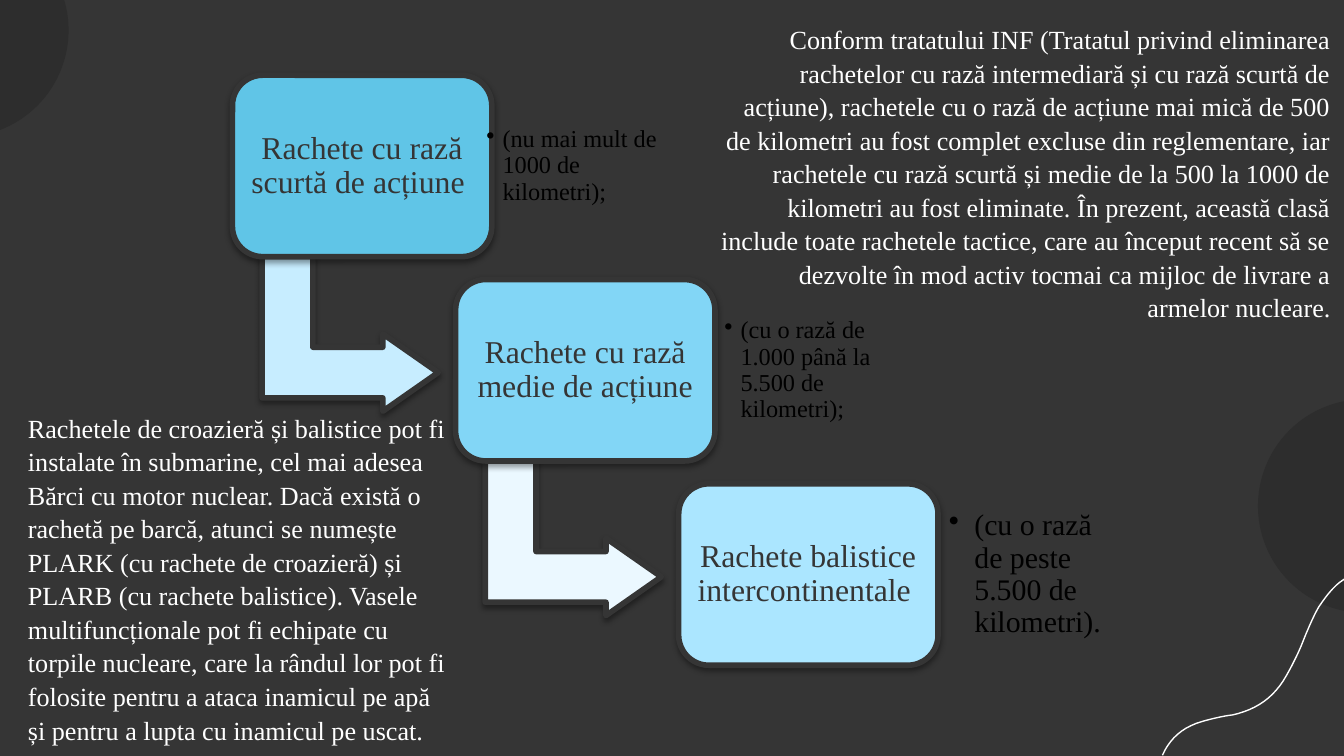
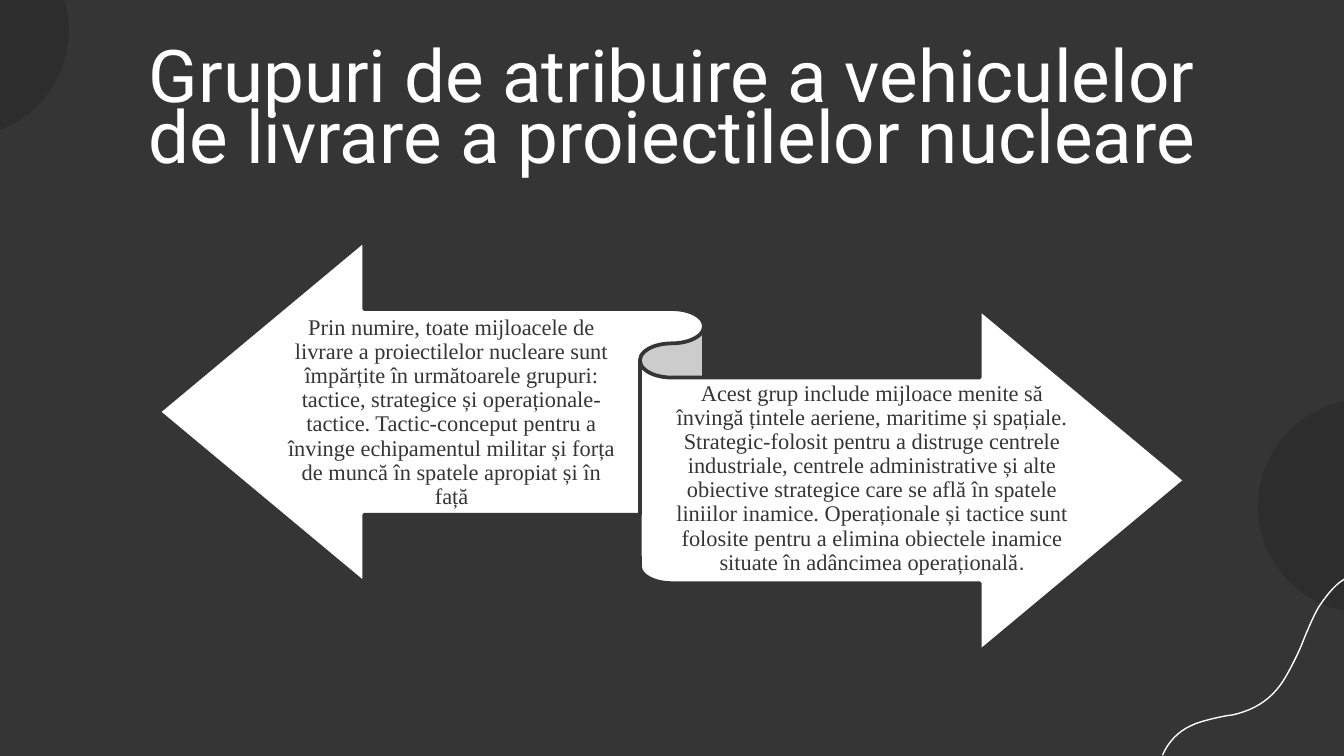
from lxml import etree
from pptx import Presentation
from pptx import util as u
from pptx.dml.color import RGBColor
from pptx.enum import shapes, text
from pptx.oxml.ns import qn

# Square grid: the slide is 100 columns wide and 56.25 rows high
SLIDE_WIDTH = u.Inches(10)
SLIDE_HEIGHT = SLIDE_WIDTH * 9 // 16
CELL = SLIDE_WIDTH / 100

COLORS = {
    "background": "353535",
    "circle": "2D2D2D",
    "light": "FFFFFF",
    "dark": "353535",
    "detail": "000000",
}
SERIF, TITLE_FONT, PLAIN = "Times New Roman", "Roboto", "Arial"
LEFT, CENTER, RIGHT = text.PP_ALIGN.LEFT, text.PP_ALIGN.CENTER, text.PP_ALIGN.RIGHT
TOP, MIDDLE = text.MSO_ANCHOR.TOP, text.MSO_ANCHOR.MIDDLE

# Wavy corner line, in cells: start, then two handles and an end per curve
WAVE_START = (86.2, 57)
WAVE_CURVES = [
    ((86.7, 55.3), (87.7, 54.2), (89.4, 53.7)),
    ((90.1, 53.5), (90.9, 53.3), (91.7, 53.2)),
    ((93.5, 52.8), (94.8, 51.9), (95.7, 50.3)),
    ((96.1, 49.6), (96.5, 48.8), (96.8, 48.1)),
    ((97.2, 47.1), (97.6, 46.1), (98.1, 45.2)),
    ((98.5, 44.6), (99, 43.9), (99.6, 43.4)),
    ((99.7, 43.3), (99.9, 43.2), (100, 43.1)),
]

# Staircase of missile classes
STEP_X, STEP_Y = 16.6, 15.2
STAIR_LEFT, STAIR_TOP = 17.3, 5.6
STEP_WIDTH, STEP_HEIGHT = 19.3, 13.5
DETAIL_WIDTH = 14.1
STEPS = [
    dict(label="Rachete cu rază scurtă de acțiune ", fill="60C5E7", arrow="C7EDFF",
         detail="(nu mai mult de 1000 de kilometri);", width=16.3),
    dict(label="Rachete cu rază medie de acțiune ", fill="82D6F6", arrow="EBF8FF",
         detail="(cu o rază de 1.000 până la 5.500 de kilometri);"),
    dict(label="Rachete balistice intercontinentale ", fill="ABE6FF",
         detail="(cu o rază de peste 5.500 de kilometri).", size=16, indent=1.9, inset=0.8),
]

TREATY = (
    "Conform tratatului INF (Tratatul privind eliminarea rachetelor cu rază intermediară "
    "și cu rază scurtă de acțiune), rachetele cu o rază de acțiune mai mică de 500 de "
    "kilometri au fost complet excluse din reglementare, iar rachetele cu rază scurtă și "
    "medie de la 500 la 1000 de kilometri au fost eliminate. În prezent, această clasă "
    "include toate rachetele tactice, care au început recent să se dezvolte în mod activ "
    "tocmai ca mijloc de livrare a armelor nucleare.")
SUBMARINES = (
    "Rachetele de croazieră și balistice pot fi instalate în submarine, cel mai adesea "
    "Bărci cu motor nuclear. Dacă există o rachetă pe barcă, atunci se numește PLARK (cu "
    "rachete de croazieră) și PLARB (cu rachete balistice). Vasele multifuncționale pot fi "
    "echipate cu torpile nucleare, care la rândul lor pot fi folosite pentru a ataca "
    "inamicul pe apă și pentru a lupta cu inamicul pe uscat.")
TACTICAL = (
    "Prin numire, toate mijloacele de livrare a proiectilelor nucleare sunt împărțite în "
    "următoarele grupuri: tactice, strategice și operaționale-tactice. Tactic-conceput "
    "pentru a învinge echipamentul militar și forța de muncă în spatele apropiat și în față")
STRATEGIC = (
    "Acest grup include mijloace menite să învingă țintele aeriene, maritime și spațiale. "
    "Strategic-folosit pentru a distruge centrele industriale, centrele administrative și "
    "alte obiective strategice care se află în spatele liniilor inamice. Operaționale și "
    "tactice sunt folosite pentru a elimina obiectele inamice situate în adâncimea "
    "operațională")


def cells(*values):
    """Turn grid cells into slide units."""
    return [round(value * CELL) for value in values]


def color(value):
    return RGBColor.from_string(value)


def add_text(page, spans, place, size=12, font=SERIF, ink=COLORS["dark"], align=CENTER,
             anchor=MIDDLE, spacing=0.9, after=0, insets=(0.7,) * 4, bullet=0, grow=False):
    """Text box with one paragraph; spans is a string or (string, font) pairs."""
    box = page.shapes.add_textbox(*cells(*place))
    frame = box.text_frame
    frame.word_wrap = True
    frame.vertical_anchor = anchor
    if grow:
        frame.auto_size = text.MSO_AUTO_SIZE.SHAPE_TO_FIT_TEXT
    (frame.margin_left, frame.margin_top,
     frame.margin_right, frame.margin_bottom) = cells(*insets)
    para = frame.paragraphs[0]
    para.alignment = align
    para.line_spacing = spacing
    para.space_after = u.Pt(after)
    if bullet:
        add_bullet(para, bullet, ink)
    for words, face in [(spans, font)] if isinstance(spans, str) else spans:
        span = para.add_run()
        span.text = words
        span.font.name = face
        span.font.size = u.Pt(size)
        span.font.color.rgb = color(ink)


def add_bullet(para, indent, ink):
    para.level = 1
    props = para._p.get_or_add_pPr()
    width = cells(indent)[0]
    props.set("marL", str(width))
    props.set("indent", str(-width))
    tint = etree.SubElement(props, qn("a:buClr"))
    etree.SubElement(tint, qn("a:srgbClr"), val=ink)
    etree.SubElement(props, qn("a:buChar"), char="•")


def add_block(page, kind, place, fill, line=0, adjust=(), turn=0, shadow=False):
    """Filled preset shape with an optional dark outline and soft shadow."""
    block = page.shapes.add_shape(kind, *cells(*place))
    block.rotation = turn
    for index, value in enumerate(adjust):
        block.adjustments[index] = value
    block.fill.solid()
    block.fill.fore_color.rgb = color(fill)
    if line:
        block.line.color.rgb = color(COLORS["dark"])
        block.line.width = u.Pt(line)
    else:
        block.line.fill.background()
    block.shadow.inherit = False
    if shadow:
        effects = block._element.spPr.find(qn("a:effectLst"))
        cast = etree.SubElement(effects, qn("a:outerShdw"), blurRad=str(u.Pt(3.1)),
                                dist=str(u.Pt(1.6)), dir="5400000", rotWithShape="0")
        tint = etree.SubElement(cast, qn("a:srgbClr"), val="000000")
        etree.SubElement(tint, qn("a:alpha"), val="38000")


def wave_points(pieces=12):
    """Sample the cubic curves and keep the points on the slide."""
    points, start = [WAVE_START], WAVE_START
    for first, second, end in WAVE_CURVES:
        for index in range(1, pieces + 1):
            t = index / pieces
            s = 1 - t
            points.append([s**3 * a + 3 * s * s * t * b + 3 * s * t * t * c + t**3 * d
                           for a, b, c, d in zip(start, first, second, end)])
        start = end
    scaled = [cells(*point) for point in points]
    return [point for point in scaled if point[1] <= SLIDE_HEIGHT]


def add_wave(page):
    points = wave_points()
    builder = page.shapes.build_freeform(*points[0])
    builder.add_line_segments(points[1:], close=False)
    wave = builder.convert_to_shape()
    wave.fill.background()
    wave.line.color.rgb = color(COLORS["light"])
    wave.line.width = u.Pt(0.75)
    wave.shadow.inherit = False


def add_page(deck):
    """Blank slide with the shared dark backdrop, circles and wave."""
    page = deck.slides.add_slide(deck.slide_layouts[6])
    page.background.fill.solid()
    page.background.fill.fore_color.rgb = color(COLORS["background"])
    for left, top in ((93.6, 29.7), (-10.8, -5.7)):
        add_block(page, shapes.MSO_SHAPE.OVAL, (left, top, 15.9, 15.9), COLORS["circle"])
    add_wave(page)
    return page


def add_step(page, index, label, fill, detail, arrow=None, width=DETAIL_WIDTH,
             size=13, indent=1.2, inset=0.7):
    """One stair: box, label, bulleted range and the arrow down to the next."""
    left, top = STAIR_LEFT + index * STEP_X, STAIR_TOP + index * STEP_Y
    if arrow:
        add_block(page, shapes.MSO_SHAPE.BENT_UP_ARROW, (left + 3, top + 12.7, 11.5, 13.1),
                  arrow, line=3, adjust=(0.328, 0.25, 0.358), turn=90, shadow=True)
    add_block(page, shapes.MSO_SHAPE.ROUNDED_RECTANGLE, (left, top, STEP_WIDTH, STEP_HEIGHT),
              fill, line=3, shadow=True)
    add_text(page, label, (left + 0.65, top + 0.65, STEP_WIDTH - 1.3, STEP_HEIGHT - 1.3),
             size=17)
    detail_left = left + STEP_WIDTH - (width - DETAIL_WIDTH) / 2
    add_text(page, detail, (detail_left, top + 1.3, width, 10.9), size=size, align=LEFT,
             ink=COLORS["detail"], insets=(inset,) * 4, bullet=indent)


def add_note(page, words, place, align):
    add_text(page, words, place, size=14, ink=COLORS["light"], align=align, anchor=TOP,
             spacing=1.07, after=8, insets=(1, 0.5, 1, 0.5), grow=True)


def build_classes(deck):
    page = add_page(deck)
    for index, step in enumerate(STEPS):
        add_step(page, index, **step)
    add_note(page, TREATY, (52.1, 1.1, 47.9, 23.7), RIGHT)
    add_note(page, SUBMARINES, (1.1, 30, 33.4, 26.2), LEFT)


def build_groups(deck):
    page = add_page(deck)
    # The deep bottom inset lifts the title above the middle of its box
    add_text(page, "Grupuri de atribuire a vehiculelor de livrare a proiectilelor nucleare",
             (7.8, 5.9, 84.4, 9.7), size=39, font=TITLE_FONT, ink=COLORS["light"],
             spacing=0.7, insets=(0, 0, 0, 4.5))
    add_block(page, shapes.MSO_SHAPE.LEFT_RIGHT_RIBBON, (11.8, 17.9, 76.4, 30.6),
              COLORS["light"], line=2)
    for spans, place in ((TACTICAL, (21, 23.2, 25.2, 15)),
                         ([(STRATEGIC, SERIF), (".", PLAIN)], (50, 28.1, 29.8, 15))):
        add_text(page, spans, place, insets=(0, 0.5, 0, 0.5))


def main():
    deck = Presentation()
    deck.slide_width, deck.slide_height = SLIDE_WIDTH, SLIDE_HEIGHT
    build_classes(deck)
    build_groups(deck)
    deck.save("out.pptx")


if __name__ == "__main__":
    main()
